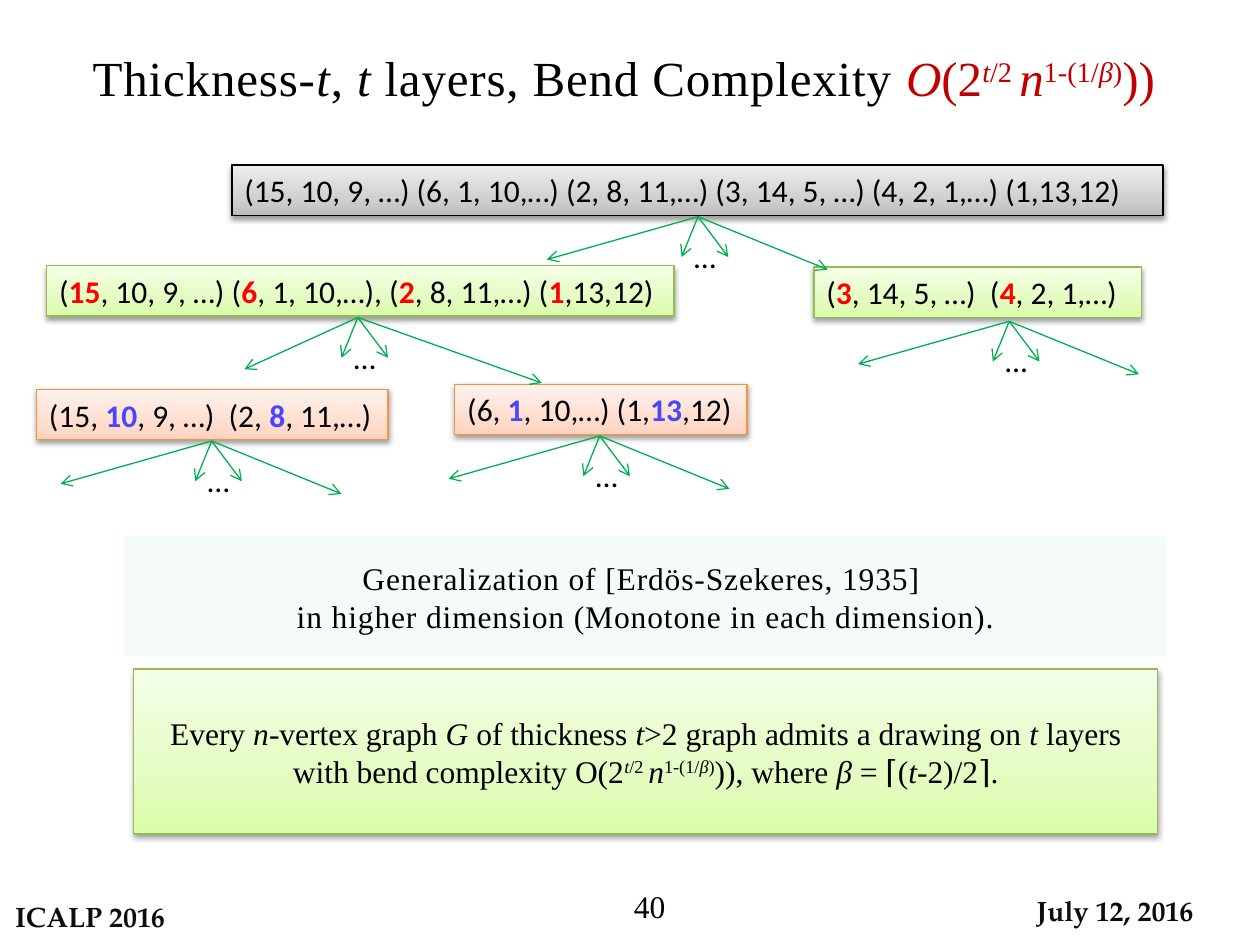
from lxml.etree import SubElement
from pptx import Presentation
from pptx.dml.color import RGBColor
from pptx.enum.shapes import MSO_CONNECTOR, MSO_SHAPE
from pptx.enum.text import MSO_ANCHOR, MSO_AUTO_SIZE, PP_ALIGN
from pptx.oxml.ns import qn
from pptx.util import Inches, Pt

SERIF = "Times New Roman"
GRAY = ("BDBDBD", "D1D1D1", "EEEEEE", "000000")
GREEN = ("DAFDA7", "E4FCC2", "F5FFE7", "98B955")
PEACH = ("FFD2BD", "FFDED0", "FFF2ED", "F69240")
RED, BLUE = "FF0000", "4747FB"
BOUND = "(2^*t*/2 ^*n*^1-(1/*β*)^)"


def tint(color, value):
    color.rgb = RGBColor.from_string(value)


def node(parent, tag, **attrs):
    return SubElement(parent, qn(tag), {k: str(v) for k, v in attrs.items()})


def write(shape, text, size=18, font=SERIF, color="000000", accent=RED,
          align=PP_ALIGN.LEFT, anchor=MSO_ANCHOR.TOP, bold=False,
          strong=False, space=0, wrap=True, grow=False):
    """Markup: * italic, ^ superscript, | accent colour."""
    frame = shape.text_frame
    frame.word_wrap = wrap
    frame.vertical_anchor = anchor
    frame.auto_size = (MSO_AUTO_SIZE.SHAPE_TO_FIT_TEXT if grow
                       else MSO_AUTO_SIZE.NONE)
    for i, line in enumerate(text.split("\n")):
        para = frame.add_paragraph() if i else frame.paragraphs[0]
        para.alignment = align
        marks = {"*": False, "^": False, "|": False}
        piece = ""
        for char in line + "\0":
            if char not in marks and char != "\0":
                piece += char
                continue
            if piece:
                run = para.add_run()
                run.text = piece
                run.font.name = font
                run.font.size = Pt(size)
                run.font.italic = marks["*"]
                run.font.bold = bold or (strong and marks["|"])
                tint(run.font.color, accent if marks["|"] else color)
                props = run._r.get_or_add_rPr()
                if marks["^"]:
                    props.set("baseline", "30000")
                if space and not marks["|"]:
                    props.set("spc", str(space))
                piece = ""
            if char in marks:
                marks[char] = not marks[char]


def label(slide, at, text, **style):
    write(slide.shapes.add_textbox(*map(Inches, at)), text, **style)


def panel(slide, at, text, kind=MSO_SHAPE.RECTANGLE, **style):
    shape = slide.shapes.add_shape(kind, *map(Inches, at))
    shape.shadow.inherit = False
    shape.fill.background()
    shape.line.fill.background()
    write(shape, text, **style)
    return shape


def card(slide, at, text, theme, **style):
    shape = panel(slide, at, text, **style)
    shape.fill.gradient()
    props = shape.element.spPr
    grad = props.find(qn("a:gradFill"))
    stops = grad.find(qn("a:gsLst"))
    for stop in list(stops):
        stops.remove(stop)
    for pos, value in zip((0, 35, 100), theme):
        node(node(stops, "a:gs", pos=pos * 1000), "a:srgbClr", val=value)
    grad.find(qn("a:lin")).set("ang", "16200000")
    tint(shape.line.color, theme[3])
    shape.line.width = Pt(0.75)
    shade = node(props.find(qn("a:effectLst")), "a:outerShdw", blurRad=40000,
                 dist=20000, dir=5400000, rotWithShape=0)
    node(node(shade, "a:srgbClr", val="000000"), "a:alpha", val=38000)


def arrow(slide, x, y, dx, dy):
    line = slide.shapes.add_connector(
        MSO_CONNECTOR.STRAIGHT, *map(Inches, (x, y, x + dx, y + dy)))
    tint(line.line.color, "00B050")
    line.line.width = Pt(0.75)
    props = line.element.spPr
    node(props.find(qn("a:ln")), "a:tailEnd", type="arrow")
    node(props, "a:effectLst")


def fan(slide, x, y, left=(-1.2, 0.34), right=(1.03, 0.42)):
    for dx, dy in (left, right, (-0.13, 0.32), (0.24, 0.32)):
        arrow(slide, x, y, dx, dy)
    label(slide, (x - 0.13, y + 0.11, 0.38, 0.4), "…", font="Calibri",
          wrap=False, grow=True)


def main():
    deck = Presentation()
    deck.slide_width, deck.slide_height = Inches(10), Inches(7.5)
    slide = deck.slides.add_slide(deck.slide_layouts[6])
    mid = dict(align=PP_ALIGN.CENTER, anchor=MSO_ANCHOR.MIDDLE)

    label(slide, (3.05, 6.99, 2.33, 0.4), "40", align=PP_ALIGN.RIGHT,
          anchor=MSO_ANCHOR.MIDDLE)
    label(slide, (0, 0.33, 10, 0.57),
          "Thickness-*t*, *t* layers, Bend Complexity |*O*" + BOUND + ") ",
          size=28, accent="C00000", align=PP_ALIGN.CENTER, space=50, grow=True)
    card(slide, (1.06, 5.31, 8.13, 1.31),
         "Every *n*-vertex graph *G* of thickness *t*>2 graph admits a drawing "
         "on *t *layers with bend complexity O" + BOUND
         + "), where *β *= ⌈(*t*-2)/2⌉.", GREEN, **mid)

    claim = panel(slide, (0.99, 4.26, 8.27, 0.95),
                  "Generalization of [Erdӧs-Szekeres, 1935] \n"
                  "in higher dimension (Monotone in each dimension).",
                  space=50, **mid)
    claim.fill.solid()
    tint(claim.fill.fore_color, "00B050")
    node(claim.element.spPr.find(qn("a:solidFill"))[0], "a:alpha", val=4000)

    foot = dict(kind=MSO_SHAPE.ROUNDED_RECTANGLE, size=16, bold=True,
                font="TeX Gyre Pagella", color="0D0D0D")
    panel(slide, (0, 7.05, 5.5, 0.45), "ICALP 2016",
          anchor=MSO_ANCHOR.MIDDLE, **foot)
    panel(slide, (7.7, 7.05, 2.3, 0.35), "July 12, 2016", **mid, **foot)

    for x, y, width, text, theme, accent in (
        (1.84, 1.31, 7.39, "(15, 10, 9, …) (6, 1, 10,…) (2, 8, 11,…) "
         "(3, 14, 5, …) (4, 2, 1,…) (1,13,12)", GRAY, RED),
        (0.37, 2.11, 4.98, "(|15|, 10, 9, …) (|6|, 1, 10,…), "
         "(|2|, 8, 11,…) (|1|,13,12)", GREEN, RED),
        (6.46, 2.12, 2.6, "(|3|, 14, 5, …)  (|4|, 2, 1,…)", GREEN, RED),
        (0.29, 3.09, 2.79, "(15, |10|, 9, …)  (2, |8|, 11,…)", PEACH, BLUE),
        (3.61, 3.05, 2.32, "(6, |1|, 10,…) (1,|13|,12)", PEACH, BLUE),
    ):
        card(slide, (x, y, width, 0.4), text, theme, font="Calibri",
             accent=accent, strong=True, wrap=False, grow=True)

    fan(slide, 5.54, 1.72)
    fan(slide, 2.84, 2.52, left=(-0.9, 0.41), right=(1.46, 0.52))
    fan(slide, 8.01, 2.55)
    fan(slide, 1.68, 3.5)
    fan(slide, 4.76, 3.46)
    deck.save("out.pptx")


if __name__ == "__main__":
    main()
